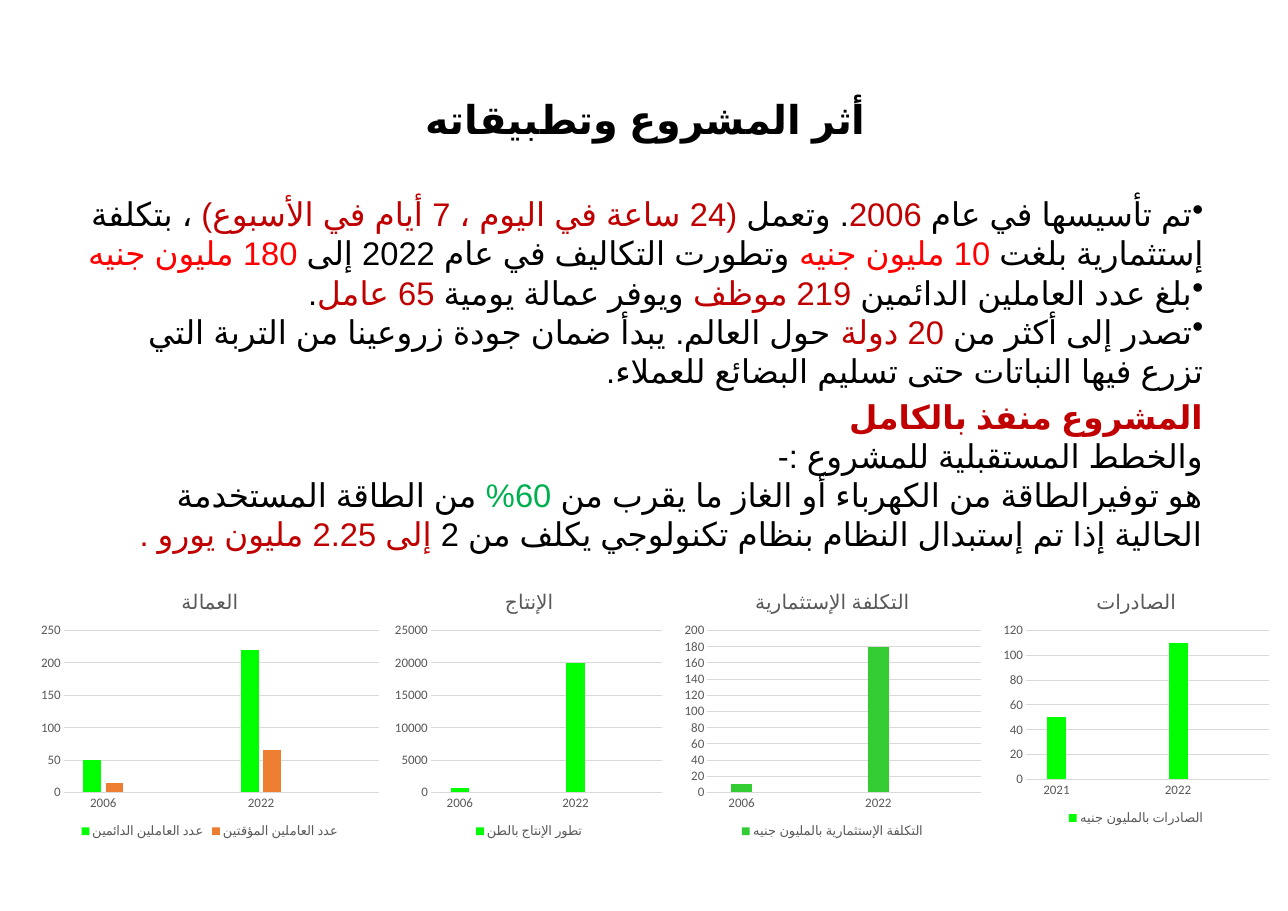
import pptx
import pptx.chart.data
import pptx.dml.color
import pptx.enum.chart
import pptx.enum.text
import pptx.oxml
import pptx.oxml.ns
import pptx.util

RGB = pptx.dml.color.RGBColor
BLACK = RGB(0x00, 0x00, 0x00)
DARK = RGB(0xC0, 0x00, 0x00)
RED = RGB(0xFF, 0x00, 0x00)
GREEN = RGB(0x00, 0xB0, 0x50)
GREY = RGB(0x59, 0x59, 0x59)
PALE = RGB(0xD9, 0xD9, 0xD9)
LIME = RGB(0x00, 0xFF, 0x00)
LEAF = RGB(0x33, 0xCC, 0x33)
ORANGE = RGB(0xED, 0x7D, 0x31)

ALIGN = pptx.enum.text.PP_ALIGN
ANCHOR = pptx.enum.text.MSO_ANCHOR
WIDE, HIGH = 16.53, 11.69
CELLS = 100
FONT = "Calibri"
CS_FONT = "Arial"
LANG = "ar-EG"


def add_tag(parent, tag, **attrs):
    child = pptx.oxml.parse_xml(f"<{tag} {pptx.oxml.ns.nsdecls(tag.split(':')[0])}/>")
    for key, value in attrs.items():
        child.set(key, str(value))
    parent.append(child)
    return child


def set_font(font, size, color, bold=False):
    font.name = FONT
    font.size = pptx.util.Pt(size)
    font.bold = bold
    font.color.rgb = color


def write(para, runs, size, align=ALIGN.RIGHT, bullet=None, bold=False, space=None):
    para.alignment = align
    props = para._p.get_or_add_pPr()
    props.set("rtl", "1")
    if space:
        para.line_spacing = space
    if bullet:
        add_tag(props, "a:buChar", char=bullet)
    for text, color in runs:
        run = para.add_run()
        run.text = text
        set_font(run.font, size, color, bold)
        look = run._r.get_or_add_rPr()
        look.set("lang", LANG)
        add_tag(look, "a:cs", typeface=CS_FONT)


class Page:
    def __init__(self, deck):
        self.slide = deck.slides.add_slide(deck.slide_layouts[6])
        self.col = deck.slide_width / CELLS
        self.row = deck.slide_height / CELLS

    def place(self, left, top, wide, high):
        return [round(n) for n in (left * self.col, top * self.row,
                                   wide * self.col, high * self.row)]

    def text(self, area, paras, pad=(0.1, 0.05), anchor=ANCHOR.TOP, grow=True):
        frame = self.slide.shapes.add_textbox(*self.place(*area)).text_frame
        frame.word_wrap = True
        frame.vertical_anchor = anchor
        frame.margin_left = frame.margin_right = pptx.util.Inches(pad[0])
        frame.margin_top = frame.margin_bottom = pptx.util.Inches(pad[1])
        if grow:
            frame.auto_size = pptx.enum.text.MSO_AUTO_SIZE.SHAPE_TO_FIT_TEXT
        for index, (runs, style) in enumerate(paras):
            para = frame.add_paragraph() if index else frame.paragraphs[0]
            write(para, runs, **style)

    def chart(self, area, title, years, series, top, step, inset):
        data = pptx.chart.data.CategoryChartData()
        data.categories = [years[0], "", years[1], ""]
        for name, first, last, color in series:
            data.add_series(name, [first, None, last, None])
        box = self.place(*area)
        chart = self.slide.shapes.add_chart(
            pptx.enum.chart.XL_CHART_TYPE.COLUMN_CLUSTERED, *box, data).chart
        set_font(chart.font, 10, BLACK)

        chart.has_title = True
        write(chart.chart_title.text_frame.paragraphs[0], [(title, GREY)],
              size=18.6, align=ALIGN.CENTER)
        chart.chart_title.include_in_layout = False

        chart.has_legend = True
        chart.legend.position = pptx.enum.chart.XL_LEGEND_POSITION.BOTTOM
        chart.legend.include_in_layout = False
        set_font(chart.legend.font, 12, GREY)

        cats, vals = chart.category_axis, chart.value_axis
        for axis in (cats, vals):
            axis.major_tick_mark = pptx.enum.chart.XL_TICK_MARK.NONE
            axis.minor_tick_mark = pptx.enum.chart.XL_TICK_MARK.NONE
            set_font(axis.tick_labels.font, 12, GREY)
        vals.has_major_gridlines = True
        for line in (cats.format.line, vals.major_gridlines.format.line):
            line.color.rgb = PALE
            line.width = pptx.util.Pt(0.75)
        vals.format.line.fill.background()
        vals.minimum_scale, vals.maximum_scale, vals.major_unit = 0, top, step

        plot = chart.plots[0]
        plot.gap_width, plot.overlap = 219, -27
        plot.vary_by_categories = False
        for bar, (name, first, last, color) in zip(plot.series, series):
            bar.format.fill.solid()
            bar.format.fill.fore_color.rgb = color
        self.fit(chart, box[2] / 914400, box[3] / 914400, inset)

    def fit(self, chart, wide, high, left, top=0.71, right=0.08, base=0.62):
        area = chart.element.xpath("c:chart/c:plotArea")[0]
        for old in area.xpath("c:layout"):
            area.remove(old)
        frame = add_tag(area, "c:layout")
        area.insert(0, frame)
        rules = add_tag(frame, "c:manualLayout")
        add_tag(rules, "c:layoutTarget", val="inner")
        add_tag(rules, "c:xMode", val="edge")
        add_tag(rules, "c:yMode", val="edge")
        add_tag(rules, "c:x", val=left / wide)
        add_tag(rules, "c:y", val=top / high)
        add_tag(rules, "c:w", val=1 - (left + right) / wide)
        add_tag(rules, "c:h", val=1 - (top + base) / high)


def main():
    deck = pptx.Presentation()
    deck.slide_width = pptx.util.Inches(WIDE)
    deck.slide_height = pptx.util.Inches(HIGH)
    page = Page(deck)

    page.text((32.18, 11.03, 35.87, 5.3), [
        ([("أثر المشروع وتطبيقاته", BLACK)],
         dict(size=36.7, align=ALIGN.CENTER, bold=True, space=0.7)),
    ], pad=(0.12, 0.06), anchor=ANCHOR.MIDDLE, grow=False)

    plain = dict(size=30.2)
    point = dict(plain, bullet="•")
    page.text((6.11, 20.87, 87.96, 22.67), [
        ([("تم تأسيسها في عام ", BLACK), ("2006", DARK), (". وتعمل ", BLACK),
          ("(24 ساعة في اليوم ، 7 أيام في الأسبوع) ", DARK),
          ("، بتكلفة إستثمارية بلغت ", BLACK), ("10 مليون جنيه ", RED),
          ("وتطورت التكاليف في عام 2022 إلى ", BLACK),
          ("180 مليون جنيه", RED)], point),
        ([("بلغ عدد العاملين الدائمين ", BLACK), ("219 موظف ", DARK),
          ("ويوفر عمالة يومية ", BLACK), ("65 عامل", DARK), (".", BLACK)], point),
        ([("تصدر إلى أكثر من", BLACK), (" 20 دولة ", DARK),
          ("حول العالم. يبدأ ضمان جودة زروعينا من التربة التي تزرع فيها "
           "النباتات حتى تسليم البضائع للعملاء.", BLACK)], point),
    ])
    page.text((7.74, 43.11, 86.27, 18.31), [
        ([("المشروع منفذ بالكامل", DARK)], dict(plain, bold=True)),
        ([("والخطط المستقبلية للمشروع :-", BLACK)], plain),
        ([("هو توفيرالطاقة من الكهرباء أو الغاز ما يقرب من", BLACK),
          (" 60% ", GREEN),
          ("من الطاقة المستخدمة الحالية إذا تم إستبدال النظام بنظام "
           "تكنولوجي يكلف من 2", BLACK),
          (" إلى 2.25 مليون يورو .", DARK)], plain),
    ])

    charts = [
        (2.66, 27.28, 29.17, "العمالة", ("2006", "2022"),
         [("عدد العاملين الدائمين", 50, 219, LIME),
          ("عدد العاملين المؤقتين", 15, 65, ORANGE)], 250, 50, 0.38),
        (30.25, 21.66, 29.17, "الإنتاج", ("2006", "2022"),
         [("تطور الإنتاج بالطن", 700, 20000, LIME)], 25000, 5000, 0.53),
        (52.63, 24.02, 29.17, "التكلفة الإستثمارية", ("2006", "2022"),
         [("التكلفة الإستثمارية بالمليون جنيه", 10, 180, LEAF)], 200, 20, 0.38),
        (77.37, 21.66, 27.72, "الصادرات", ("2021", "2022"),
         [("الصادرات بالمليون جنيه", 50, 110, LIME)], 120, 20, 0.38),
    ]
    for left, wide, high, *rest in charts:
        page.chart((left, 63.13, wide, high), *rest)

    deck.save("out.pptx")


if __name__ == "__main__":
    main()
